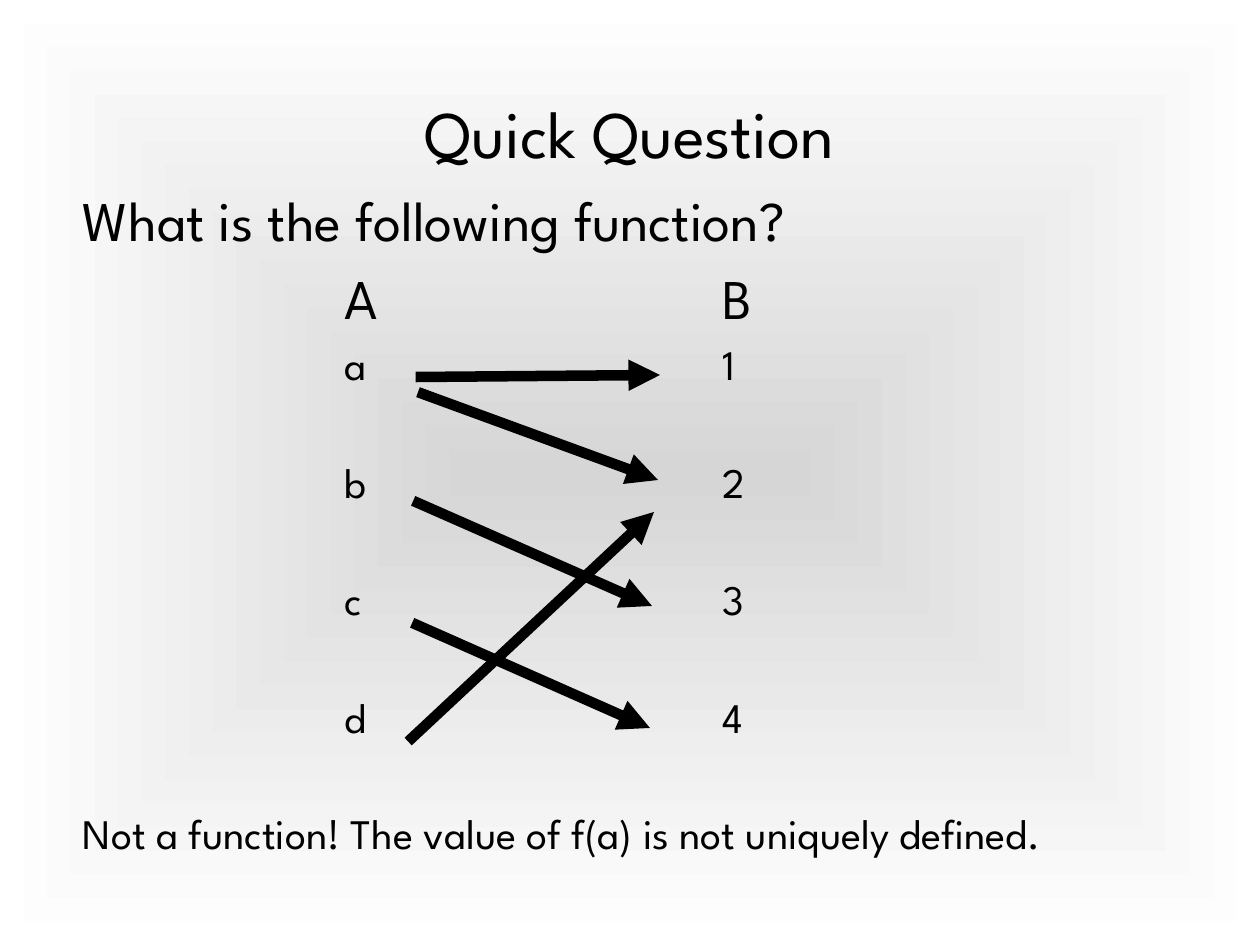
from dataclasses import dataclass
from typing import NamedTuple

from lxml.etree import SubElement as Sub
from pptx import Presentation
from pptx.dml.color import RGBColor as Rgb
from pptx.enum.shapes import MSO_CONNECTOR as Conn
from pptx.enum.text import MSO_ANCHOR as Anchor, MSO_AUTO_SIZE as Auto, PP_ALIGN as Align
from pptx.oxml.ns import qn
from pptx.util import Pt

PX = 914400 // 126


@dataclass(frozen=True)
class Theme:
    font: str = "League Spartan"
    ink: str = "000000"
    core: str = "D6D6D6"
    rim: str = "FFFFFF"
    title: int = 38
    head: int = 32
    text: int = 24
    top: float = 38.5
    wide: float = 44.4
    line: float = 33.6
    last: float = 32.6
    arrow: int = 6


class Row(NamedTuple):
    text: str
    size: int
    line: float
    gap: float = 0
    left: int = 0


class Arrow(NamedTuple):
    x1: int
    y1: int
    x2: int
    y2: int


LOOK = Theme()
LEFT = 262
TABS = "\t" * 6
PAIRS = (("a", "1"), ("b", "2"), ("c", "3"), ("d", "4"))
ROWS = (
    Row("What is the following function?", LOOK.head, LOOK.top),
    Row(f"A{TABS}B", LOOK.head, LOOK.wide, left=LEFT),
    *(Row(f"{a}{TABS}{b}", LOOK.text, LOOK.line, LOOK.line if n else 0, LEFT)
      for n, (a, b) in enumerate(PAIRS)),
    Row("Not a function! The value of f(a) is not uniquely defined.",
        LOOK.text, LOOK.line, LOOK.last),
)
ARROWS = (
    Arrow(421, 377, 660, 375),
    Arrow(418, 503, 652, 606),
    Arrow(417, 625, 650, 728),
    Arrow(412, 738, 654, 512),
    Arrow(423, 394, 658, 480),
)


def place(shape, x: int, y: int, w: int, h: int) -> None:
    shape.left, shape.top, shape.width, shape.height = (v * PX for v in (x, y, w, h))


def write(para, text: str, *, size: int, align=Align.LEFT,
          line: float = 0, gap: float = 0, left: int = 0) -> None:
    para.alignment = align
    para.space_before = Pt(gap)
    if line:
        para.line_spacing = Pt(line)
    props = para._p.get_or_add_pPr()
    props.set("marL", str(left * PX))
    props.set("indent", "0")
    Sub(props, qn("a:buNone"))
    run = para.add_run()
    run.text = text
    run.font.name = LOOK.font
    run.font.size = Pt(size)
    run.font.color.rgb = Rgb.from_string(LOOK.ink)


def shade(slide) -> None:
    fill = slide.background.fill
    fill.gradient()
    for stop, tint in zip(fill.gradient_stops, (LOOK.core, LOOK.rim)):
        stop.color.rgb = Rgb.from_string(tint)
    grad = slide._element.find(".//" + qn("a:gradFill"))
    grad.remove(grad.find(qn("a:lin")))
    route = Sub(grad, qn("a:path"), {"path": "shape"})
    Sub(route, qn("a:fillToRect"), {side: "50000" for side in "ltrb"})


def draw(slide, arrow: Arrow) -> None:
    link = slide.shapes.add_connector(Conn.STRAIGHT, *(v * PX for v in arrow))
    link.line.color.rgb = Rgb.from_string(LOOK.ink)
    link.line.width = Pt(LOOK.arrow)
    edge = link.line._get_or_add_ln()
    edge.set("cap", "sq")
    Sub(edge, qn("a:tailEnd"), type="triangle")
    Sub(link._element.spPr, qn("a:effectLst"))


def main() -> None:
    deck = Presentation()
    deck.slide_width, deck.slide_height = 1260 * PX, 945 * PX
    slide = deck.slides.add_slide(deck.slide_layouts[1])
    shade(slide)

    title, body = slide.placeholders
    place(title, 31, 27, 1198, 210)
    title.text_frame.vertical_anchor = Anchor.MIDDLE
    write(title.text_frame.paragraphs[0], "Quick Question",
          size=LOOK.title, align=Align.CENTER)

    place(body, 45, 179, 1215, 753)
    frame = body.text_frame
    frame.auto_size = Auto.NONE
    frame.margin_left = frame.margin_right = 38 * PX
    for n, row in enumerate(ROWS):
        para = frame.add_paragraph() if n else frame.paragraphs[0]
        write(para, row.text, size=row.size, line=row.line,
              gap=row.gap, left=row.left)

    for arrow in ARROWS:
        draw(slide, arrow)
    deck.save("out.pptx")


if __name__ == "__main__":
    main()
